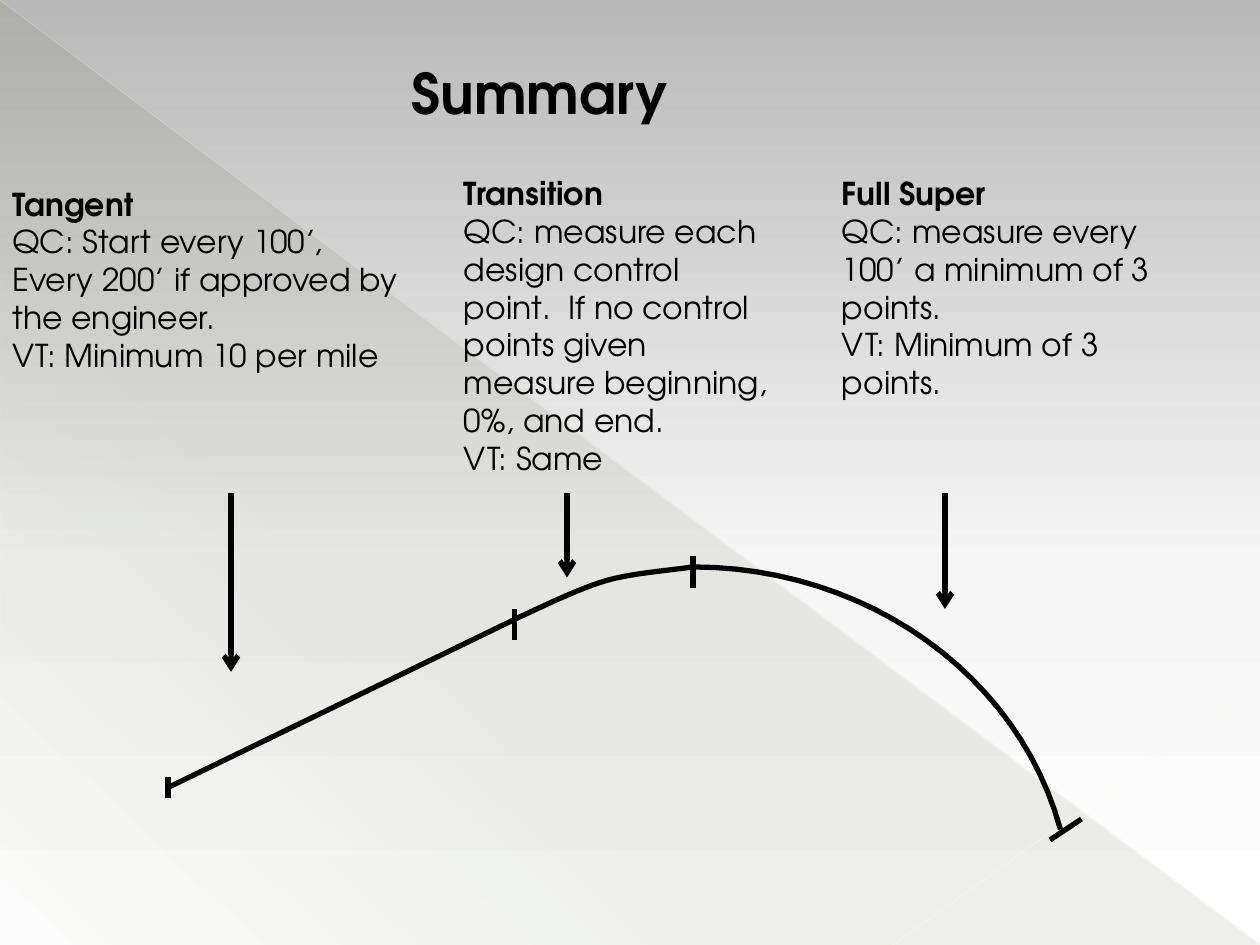
from dataclasses import dataclass

from lxml import etree
from pptx import Presentation
from pptx import util as u
from pptx.dml.color import RGBColor
from pptx.enum import shapes, text
from pptx.oxml.ns import qn

COLUMNS, ROWS = 120, 90
CELL = u.Inches(10) // COLUMNS


@dataclass(frozen=True)
class Theme:
    """Colours, type and line weights of the slide."""

    font: str = "TeX Gyre Adventor"
    ink: str = "000000"
    title_size: int = 32
    body_size: int = 18
    stroke: float = 3
    sky: tuple = ((0, "B9B9B9", 100), (60, "F6F6F6", 100), (100, "FFFFFF", 100))
    wedge: tuple = ((0, "444D26", 10), (70, "444D26", 8), (100, "444D26", 1))
    diagonal: tuple = ("FFFDE3", 0.39, 35)
    corner: tuple = ("FFFDE6", 0.47, 45)


@dataclass(frozen=True)
class Box:
    """A region measured in columns and rows."""

    left: float
    top: float
    width: float
    height: float

    def point(self, x, y):
        """Turn a place inside the region into slide lengths."""
        return round((self.left + x) * CELL), round((self.top + y) * CELL)

    def frame(self):
        """Give left, top, width and height as slide lengths."""
        return (*self.point(0, 0), round(self.width * CELL), round(self.height * CELL))


THEME = Theme()
PAGE = Box(0, 0, COLUMNS, ROWS)
NOTES = (
    (Box(0, 17, 40, 19.4), "Tangent\nQC: Start every 100’,\n"
     "Every 200’ if approved by the engineer.\nVT: Minimum 10 per mile"),
    (Box(43, 16, 32, 30.2), "Transition\nQC: measure each design control point.  "
     "If no control points given measure beginning, 0%, and end.\nVT: Same"),
    (Box(79, 16, 33, 23), "Full Super\nQC: measure every 100’ a minimum of 3 points.\n"
     "VT: Minimum of 3 points."),
)


def set_alpha(colour, percent):
    """Make a colour element partly transparent."""
    etree.SubElement(colour, qn("a:alpha"), val=str(percent * 1000))


def fill_gradient(owner, fill, stops, clockwise):
    """Fill with a linear gradient of position, colour and opacity stops."""
    fill.gradient()
    fill.gradient_angle = 360 - clockwise
    stop_list = owner.find(".//" + qn("a:gsLst"))
    for old in list(stop_list):
        stop_list.remove(old)
    for position, rgb, opacity in stops:
        stop = etree.SubElement(stop_list, qn("a:gs"), pos=str(position * 1000))
        set_alpha(etree.SubElement(stop, qn("a:srgbClr"), val=rgb), opacity)


def draw_line(slide, box, start, end, colour=THEME.ink, weight=THEME.stroke,
              opacity=100, arrow=False):
    """Draw a straight line between two places in a region."""
    line = slide.shapes.add_connector(
        shapes.MSO_CONNECTOR.STRAIGHT, *box.point(*start), *box.point(*end))
    line.line.color.rgb = RGBColor.from_string(colour)
    line.line.width = u.Pt(weight)
    properties = line.element.spPr
    set_alpha(properties.find(".//" + qn("a:srgbClr")), opacity)
    if arrow:
        etree.SubElement(properties.find(qn("a:ln")), qn("a:tailEnd"), type="arrow")
    etree.SubElement(properties, qn("a:effectLst"))


def bezier(controls, steps=24):
    """List the places along a cubic curve after its start."""
    weights = [((1 - t) ** 3, 3 * t * (1 - t) ** 2, 3 * t * t * (1 - t), t ** 3)
               for t in (step / steps for step in range(1, steps + 1))]
    return [tuple(sum(w * c[axis] for w, c in zip(row, controls)) for axis in (0, 1))
            for row in weights]


def draw_curve(slide, box, start, *spans):
    """Draw an open curve of joined cubic spans in a region."""
    places = [start]
    for span in spans:
        places += bezier((places[-1], *span))
    builder = slide.shapes.build_freeform(*box.point(*start))
    builder.add_line_segments([box.point(*place) for place in places[1:]], close=False)
    curve = builder.convert_to_shape()
    curve.shadow.inherit = False
    curve.fill.background()
    curve.line.color.rgb = RGBColor.from_string(THEME.ink)
    curve.line.width = u.Pt(THEME.stroke)


def add_backdrop(slide, box):
    """Lay the shaded page, its wedge and the two pale lines."""
    fill_gradient(slide.element, slide.background.fill, THEME.sky, 90)
    wedge = slide.shapes.add_shape(shapes.MSO_SHAPE.RIGHT_TRIANGLE, *box.frame())
    wedge.shadow.inherit = False
    wedge.line.fill.background()
    fill_gradient(wedge.element.spPr, wedge.fill, THEME.wedge, 133)
    draw_line(slide, box, (0, 0), (box.width, box.height), *THEME.diagonal)
    draw_line(slide, box, (box.width, 65), (85, box.height), *THEME.corner)


def add_words(slide, box, words, size, wrap=True):
    """Set a text block whose first paragraph is bold."""
    frame = slide.shapes.add_textbox(*box.frame()).text_frame
    frame.text = words
    frame.word_wrap = wrap
    frame.auto_size = text.MSO_AUTO_SIZE.SHAPE_TO_FIT_TEXT
    for index, paragraph in enumerate(frame.paragraphs):
        for run in paragraph.runs:
            run.font.name = THEME.font
            run.font.size = u.Pt(size)
            run.font.bold = index == 0
            run.font.color.rgb = RGBColor.from_string(THEME.ink)


def add_road(slide, box):
    """Draw the tangent, transition and full super with ticks and arrows."""
    tangent_start, tangent_end, crest, road_end = (0, 28), (33, 12), (50, 7), (85, 32)
    draw_line(slide, box, tangent_start, tangent_end)
    draw_curve(slide, box, tangent_end,
               ((36, 10.6), (38.9, 9.2), (41.4, 8.4)),
               ((44, 7.6), (47.2, 7.4), crest))
    draw_curve(slide, box, crest, ((66.6, 7), (81, 17.3), road_end))
    ticks = (((0, 27), (0, 29)), ((33, 11), (33, 14)),
             ((50, 6), (50, 9)), ((87, 31), (84, 33)))
    for start, end in ticks:
        draw_line(slide, box, start, end)
    for x, length in ((6, 17), (38, 8), (74, 11)):
        draw_line(slide, box, (x, 0), (x, length), arrow=True)


def main():
    """Build the summary slide."""
    deck = Presentation()
    deck.slide_width, deck.slide_height = COLUMNS * CELL, ROWS * CELL
    slide = deck.slides.add_slide(deck.slide_layouts[6])
    add_backdrop(slide, PAGE)
    add_words(slide, Box(38, 5, 27, 7.7), "Summary", THEME.title_size, wrap=False)
    for box, words in NOTES:
        add_words(slide, box, words, THEME.body_size)
    add_road(slide, Box(16, 47, 87, 33))
    deck.save("out.pptx")


if __name__ == "__main__":
    main()
